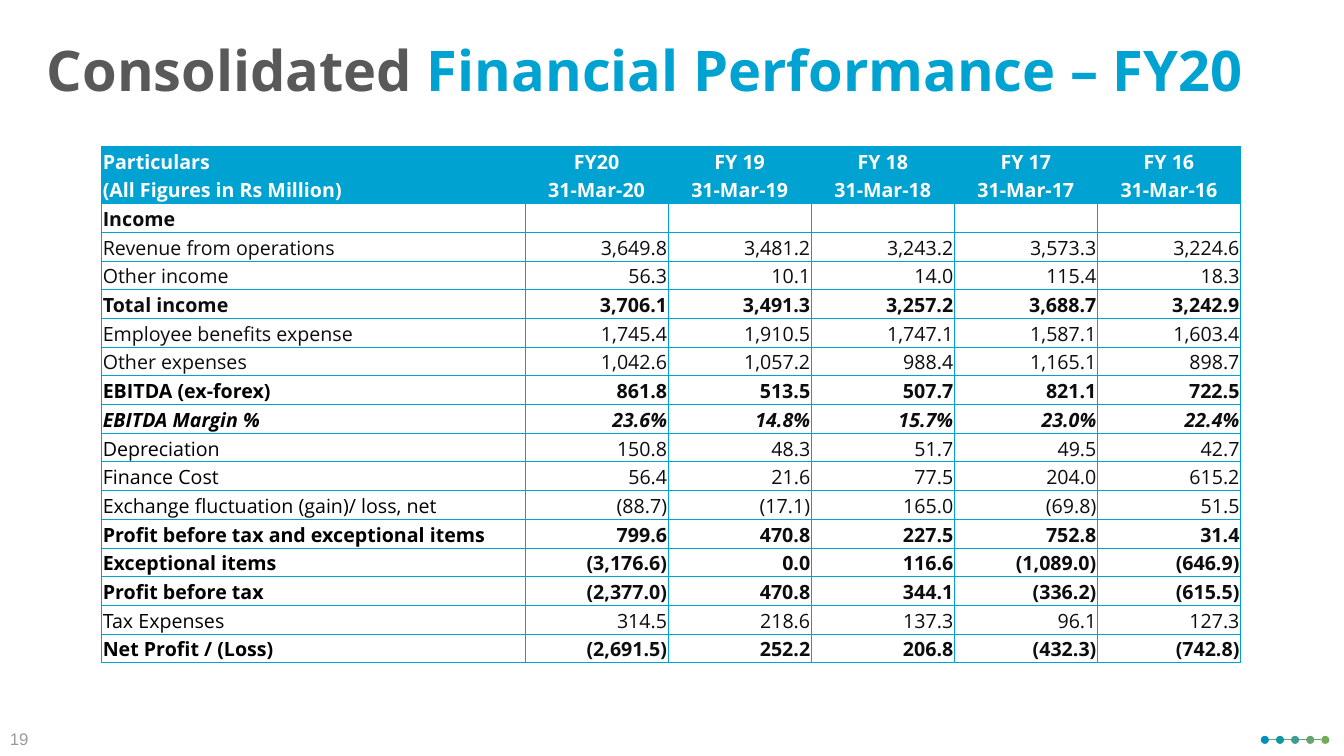
from dataclasses import dataclass

from lxml import etree
from pptx import Presentation
from pptx import util as u
from pptx.dml.color import RGBColor
from pptx.enum import shapes, text
from pptx.oxml import ns

PX = 4572


@dataclass(frozen=True)
class Theme:
    accent: str = "00A2D2"
    heading: str = "595959"
    white: str = "FFFFFF"
    label: str = "000000"
    value: str = "0D0D0D"
    muted: str = "9B9B9B"
    rail: str = "64A570"
    dots: tuple = ("008FBC", "1396A4", "409C8E", "64A570", "75AA57")
    font: str = "Open Sans"
    number_font: str = "Arial"
    title_size: int = 40
    table_size: int = 14
    number_size: int = 12
    hairline: float = 0.5


LEFT, CENTER, RIGHT = text.PP_ALIGN.LEFT, text.PP_ALIGN.CENTER, text.PP_ALIGN.RIGHT

HEADER = [
    ("Particulars", "FY20", "FY 19", "FY 18", "FY 17", "FY 16"),
    ("(All Figures in Rs Million)", "31-Mar-20", "31-Mar-19", "31-Mar-18", "31-Mar-17", "31-Mar-16"),
]
RESULTS = [
    ("Income", "", "", "", "", ""),
    ("Revenue from operations", "3,649.8", "3,481.2", "3,243.2", "3,573.3", "3,224.6"),
    ("Other income", "56.3", "10.1", "14.0", "115.4", "18.3"),
    ("Total income", "3,706.1", "3,491.3", "3,257.2", "3,688.7", "3,242.9"),
    ("Employee benefits expense", "1,745.4", "1,910.5", "1,747.1", "1,587.1", "1,603.4"),
    ("Other expenses", "1,042.6", "1,057.2", "988.4", "1,165.1", "898.7"),
    ("EBITDA (ex-forex)", "861.8", "513.5", "507.7", "821.1", "722.5"),
    ("EBITDA Margin %", "23.6%", "14.8%", "15.7%", "23.0%", "22.4%"),
    ("Depreciation", "150.8", "48.3", "51.7", "49.5", "42.7"),
    ("Finance Cost", "56.4", "21.6", "77.5", "204.0", "615.2"),
    ("Exchange fluctuation (gain)/ loss, net", "(88.7)", "(17.1)", "165.0", "(69.8)", "51.5"),
    ("Profit before tax and exceptional items", "799.6", "470.8", "227.5", "752.8", "31.4"),
    ("Exceptional items", "(3,176.6)", "0.0", "116.6", "(1,089.0)", "(646.9)"),
    ("Profit before tax", "(2,377.0)", "470.8", "344.1", "(336.2)", "(615.5)"),
    ("Tax Expenses", "314.5", "218.6", "137.3", "96.1", "127.3"),
    ("Net Profit / (Loss)", "(2,691.5)", "252.2", "206.8", "(432.3)", "(742.8)"),
]
BOLD = {"Income", "Total income", "EBITDA (ex-forex)", "EBITDA Margin %", "Exceptional items",
        "Profit before tax and exceptional items", "Profit before tax", "Net Profit / (Loss)"}
ITALIC = {"EBITDA Margin %"}
FIRST_BLACK_ROW = 8


class Deck:
    def __init__(self, theme, width, height):
        self.theme = theme
        self.prs = Presentation()
        self.prs.slide_width, self.prs.slide_height = width * PX, height * PX
        self.s = self.prs.slides.add_slide(self.prs.slide_layouts[6])

    def style(self, p, size, color=None, bold=False, italic=False, name=None, align=LEFT):
        p.alignment = align
        f = p.font
        f.name, f.size, f.bold, f.italic = name or self.theme.font, u.Pt(size), bold, italic
        if color:
            f.color.rgb = RGBColor.from_string(color)

    def text_box(self, x, y, w, h, runs, size, spacing=1.0, **font):
        sp = self.s.shapes.add_textbox(x * PX, y * PX, w * PX, h * PX)
        tf = sp.text_frame
        tf.word_wrap = True
        tf.vertical_anchor = text.MSO_ANCHOR.MIDDLE
        p = tf.paragraphs[0]
        p.line_spacing = spacing
        self.style(p, size, **font)
        for words, color in runs:
            r = p.add_run()
            r.text = words
            r.font.color.rgb = RGBColor.from_string(color)

    def line(self, x1, y1, x2, y2, color):
        c = self.s.shapes.add_connector(
            shapes.MSO_CONNECTOR.STRAIGHT, x1 * PX, y1 * PX, x2 * PX, y2 * PX)
        c.line.color.rgb = RGBColor.from_string(color)
        c.line.width = u.Pt(self.theme.hairline)
        etree.SubElement(c._element.spPr, ns.qn("a:effectLst"))

    def dot(self, x, y, d, color):
        sp = self.s.shapes.add_shape(shapes.MSO_SHAPE.OVAL, x * PX, y * PX, d * PX, d * PX)
        sp.shadow.inherit = False
        sp.fill.solid()
        sp.fill.fore_color.rgb = RGBColor.from_string(color)
        sp.line.fill.background()

    def borders(self, cell):
        tcPr = cell._tc.get_or_add_tcPr()
        for i, side in enumerate(("lnL", "lnR", "lnT", "lnB")):
            ln = etree.Element(ns.qn(f"a:{side}"), w=str(u.Pt(self.theme.hairline)))
            fill = etree.SubElement(ln, ns.qn("a:solidFill"))
            etree.SubElement(fill, ns.qn("a:srgbClr"), val=self.theme.accent)
            tcPr.insert(i, ln)

    def cell(self, cell, words, fill=None, **font):
        cell.margin_left = cell.margin_right = cell.margin_top = 2 * PX
        cell.margin_bottom = 0
        cell.vertical_anchor = text.MSO_ANCHOR.BOTTOM
        if fill:
            cell.fill.solid()
            cell.fill.fore_color.rgb = RGBColor.from_string(fill)
        else:
            cell.fill.background()
        cell.text = words
        self.style(cell.text_frame.paragraphs[0], self.theme.table_size, **font)
        self.borders(cell)

    def table(self, x, y, widths, row_height, header, body):
        t = self.theme
        rows = header + body
        tbl = self.s.shapes.add_table(len(rows), len(widths), x * PX, y * PX,
                                      sum(widths) * PX, len(rows) * row_height * PX).table
        tbl.first_row = tbl.horz_banding = False
        for col, w in zip(tbl.columns, widths):
            col.width = w * PX
        for i, row in enumerate(rows):
            tbl.rows[i].height = row_height * PX
            for j, words in enumerate(row):
                if i < len(header):
                    self.cell(tbl.cell(i, j), words, t.accent, color=t.white, bold=True,
                              align=CENTER if j else LEFT)
                else:
                    black = j == 0 and i >= FIRST_BLACK_ROW
                    self.cell(tbl.cell(i, j), words, color=t.label if black else t.value,
                              bold=row[0] in BOLD, italic=row[0] in ITALIC,
                              align=RIGHT if j else LEFT)


def main():
    t = Theme()
    deck = Deck(t, 2667, 1500)
    deck.line(2518, 1467, 2622, 1467, t.rail)
    for i, color in enumerate(t.dots):
        deck.dot(2502 + 30 * i, 1460, 16, color)
    deck.text_box(0, 0, 2558, 290,
                  [("Consolidated ", t.heading), ("Financial Performance – FY20", t.accent)],
                  t.title_size, spacing=0.9, bold=True, align=CENTER)
    deck.text_box(0, 1426, 122, 80, [("19", t.muted)], t.number_size, name=t.number_font)
    deck.table(202, 290, [840] + [284] * 5, 57, HEADER, RESULTS)
    deck.prs.save("out.pptx")


if __name__ == "__main__":
    main()
